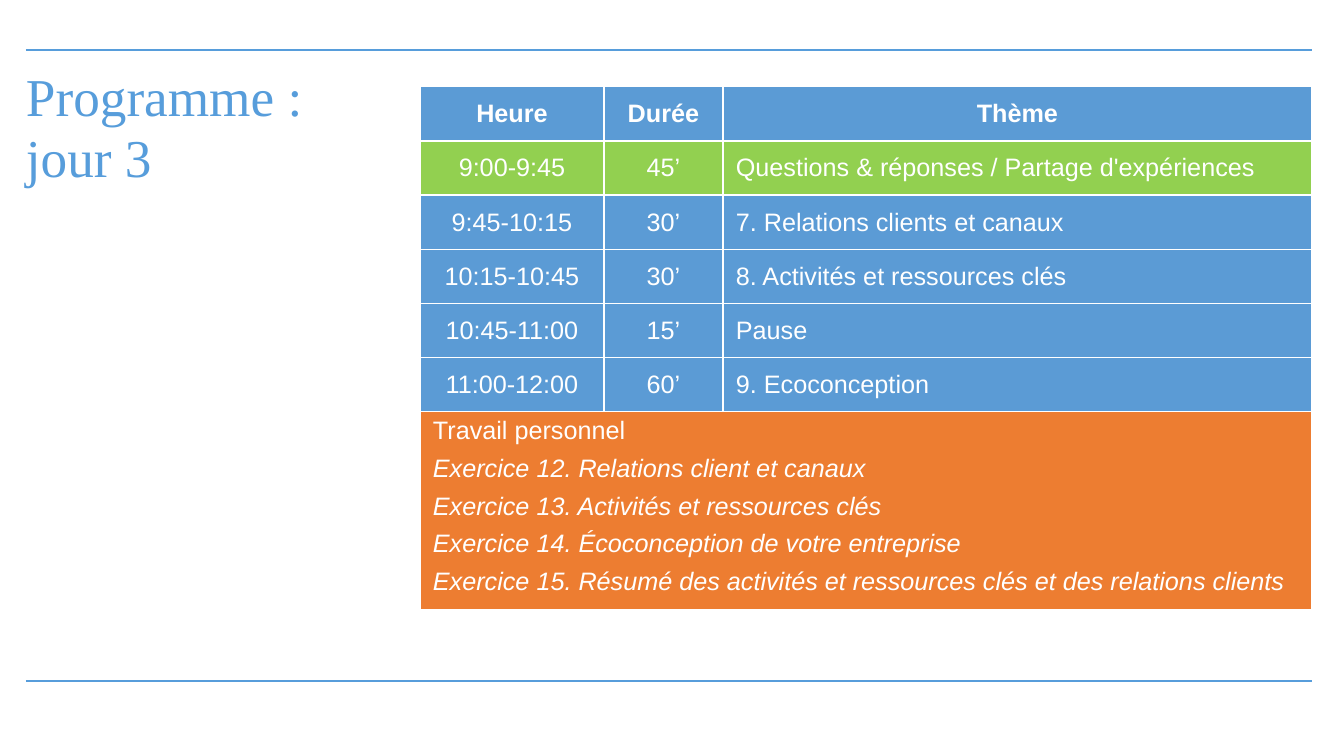
from dataclasses import dataclass

from lxml import etree
from pptx import Presentation
from pptx.dml.color import RGBColor
from pptx.enum import shapes, text
from pptx.oxml import ns
from pptx.util import Emu, Pt

EMU_PER_PX = 914400 / 100.8
WHITE, RULE_BLUE = "FFFFFF", "579DDB"
BLUE, GREEN, ORANGE = "5B9BD5", "92D050", "ED7D31"
LEFT, RIGHT = 26, 1312
RULE_TOPS = (50, 681)
TABLE_LEFT, TABLE_TOP = 420, 86
COLUMN_WIDTHS = (184, 119, 589)
ROW_HEIGHTS = (55, 54, 55, 54, 54, 54, 198)
CENTER, JUSTIFY = text.PP_ALIGN.CENTER, text.PP_ALIGN.JUSTIFY


@dataclass(frozen=True)
class Session:
    time: str
    duration: str
    theme: str
    fill: str = BLUE
    header: bool = False


SESSIONS = (
    Session("Heure", "Durée", "Thème", header=True),
    Session("9:00-9:45", "45’", "Questions & réponses / Partage d'expériences", GREEN),
    Session("9:45-10:15", "30’", "7. Relations clients et canaux"),
    Session("10:15-10:45", "30’", "8. Activités et ressources clés"),
    Session("10:45-11:00", "15’", "Pause"),
    Session("11:00-12:00", "60’", "9. Ecoconception"),
)
HOMEWORK = (
    "Travail personnel",
    "Exercice 12. Relations client et canaux",
    "Exercice 13. Activités et ressources clés",
    "Exercice 14. Écoconception de votre entreprise",
    "Exercice 15. Résumé des activités et ressources clés et des relations clients",
)


def px(length: int) -> Emu:
    return Emu(round(length * EMU_PER_PX))


def color(value: str) -> RGBColor:
    return RGBColor.from_string(value)


def add_run(paragraph, content: str, size: int, font: str, fill: str,
            bold: bool = False, italic: bool = False) -> None:
    run = paragraph.add_run()
    run.text = content
    run.font.size, run.font.name = Pt(size), font
    run.font.bold, run.font.italic = bold, italic
    run.font.color.rgb = color(fill)


def add_rule(slide, top: int) -> None:
    rule = slide.shapes.add_connector(
        shapes.MSO_CONNECTOR.STRAIGHT, px(LEFT), px(top), px(RIGHT), px(top))
    rule.line.color.rgb = color(RULE_BLUE)
    rule.line.width = Pt(1)
    etree.SubElement(rule._element.spPr, ns.qn("a:effectLst"))


def format_title(slide) -> None:
    title = slide.shapes.title
    title.left, title.top, title.width, title.height = map(px, (LEFT, 68, 345, 88))
    frame = title.text_frame
    frame.margin_left = frame.margin_top = frame.margin_right = frame.margin_bottom = 0
    frame.word_wrap = True
    frame.auto_size = text.MSO_AUTO_SIZE.NONE
    frame.vertical_anchor = text.MSO_ANCHOR.TOP
    paragraph = frame.paragraphs[0]
    paragraph.alignment = text.PP_ALIGN.LEFT
    paragraph.line_spacing = 0.95
    paragraph.space_before = Pt(0)
    add_run(paragraph, "Programme : jour 3", 38, "Times New Roman", RULE_BLUE)


def style_cell(cell, fill: str, anchor: text.MSO_ANCHOR) -> None:
    cell.margin_left = cell.margin_right = px(13)
    cell.margin_top = cell.margin_bottom = px(12)
    cell.vertical_anchor = anchor
    properties = cell._tc.get_or_add_tcPr()
    for side in ("lnL", "lnR", "lnT", "lnB"):
        border = etree.SubElement(properties, ns.qn(f"a:{side}"), w=str(Pt(1)))
        solid = etree.SubElement(border, ns.qn("a:solidFill"))
        etree.SubElement(solid, ns.qn("a:srgbClr"), val=WHITE)
    cell.fill.solid()
    cell.fill.fore_color.rgb = color(fill)


def fill_session(cells, session: Session) -> None:
    contents = (session.time, session.duration, session.theme)
    alignments = (CENTER, CENTER, CENTER if session.header else JUSTIFY)
    for cell, content, alignment in zip(cells, contents, alignments):
        style_cell(cell, session.fill, text.MSO_ANCHOR.MIDDLE)
        paragraph = cell.text_frame.paragraphs[0]
        paragraph.alignment = alignment
        add_run(paragraph, content, 18, "Arial", WHITE, bold=session.header)


def fill_homework(cells) -> None:
    first, *_, last = cells
    first.merge(last)
    for cell in cells:
        style_cell(cell, ORANGE, text.MSO_ANCHOR.TOP)
    frame = first.text_frame
    for index, content in enumerate(HOMEWORK):
        paragraph = frame.add_paragraph() if index else frame.paragraphs[0]
        paragraph.line_spacing = Pt(15)
        paragraph.space_before = Pt(6 if index else 0)
        paragraph.space_after = Pt(6)
        add_run(paragraph, content, 18, "Arial", WHITE, italic=index > 0)


def add_programme(slide) -> None:
    table = slide.shapes.add_table(
        len(ROW_HEIGHTS), len(COLUMN_WIDTHS), px(TABLE_LEFT), px(TABLE_TOP),
        px(sum(COLUMN_WIDTHS)), px(sum(ROW_HEIGHTS))).table
    table.first_row = table.horz_banding = False
    for column, width in zip(table.columns, COLUMN_WIDTHS):
        column.width = px(width)
    for row, height in zip(table.rows, ROW_HEIGHTS):
        row.height = px(height)
    *session_rows, homework_row = table.rows
    for row, session in zip(session_rows, SESSIONS):
        fill_session(row.cells, session)
    fill_homework(list(homework_row.cells))


def main() -> None:
    presentation = Presentation()
    presentation.slide_width, presentation.slide_height = px(1344), px(756)
    slide = presentation.slides.add_slide(presentation.slide_layouts.get_by_name("Title Only"))
    for top in RULE_TOPS:
        add_rule(slide, top)
    format_title(slide)
    add_programme(slide)
    presentation.save("out.pptx")


if __name__ == "__main__":
    main()
